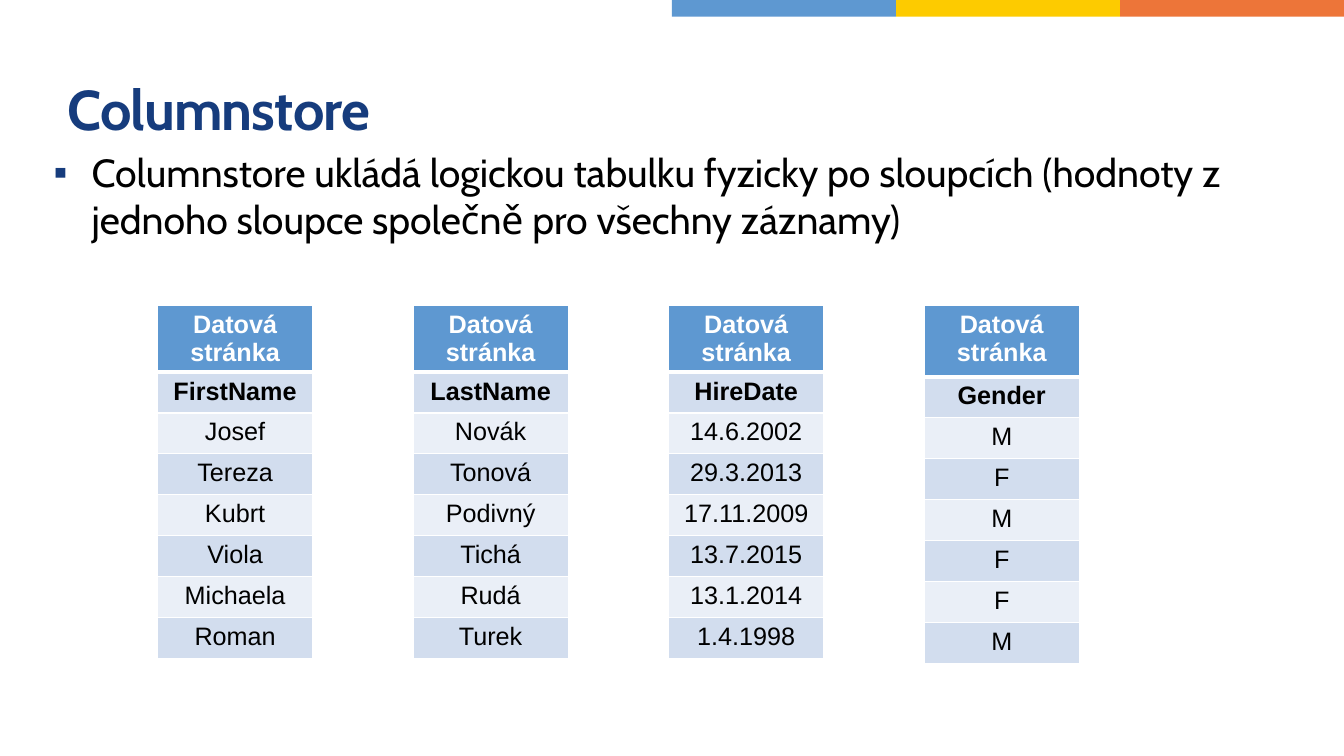
from lxml.etree import SubElement
from pptx import Presentation
from pptx.dml.color import RGBColor
from pptx.enum.shapes import MSO_SHAPE
from pptx.enum.text import MSO_ANCHOR, MSO_AUTO_SIZE, PP_ALIGN
from pptx.oxml.ns import qn
from pptx.util import Cm, Pt

NAVY = RGBColor(0x16, 0x3C, 0x7D)
BLUE = RGBColor(0x5E, 0x98, 0xD1)
YELLOW = RGBColor(0xFD, 0xCB, 0x00)
ORANGE = RGBColor(0xED, 0x75, 0x39)
PALE = RGBColor(0xD2, 0xDD, 0xEE)
PALER = RGBColor(0xEA, 0xEF, 0xF7)
WHITE = RGBColor(0xFF, 0xFF, 0xFF)
BLACK = RGBColor(0x00, 0x00, 0x00)

TITLE_FONT = {"name": "Cabin", "size": Pt(40), "bold": True}
BODY_FONT = {"name": "Cabin", "size": Pt(28)}
CELL_FONT = {"name": "Arial", "size": Pt(18)}
FLUSH = {
    "margin_left": 0, "margin_top": 0, "margin_right": 0, "margin_bottom": 0,
    "word_wrap": True, "auto_size": MSO_AUTO_SIZE.NONE,
}

DATA_PAGES = [
    (Cm(1.67), ["FirstName", "Josef", "Tereza", "Kubrt", "Viola", "Michaela", "Roman"]),
    (Cm(1.67), ["LastName", "Novák", "Tonová", "Podivný", "Tichá", "Rudá", "Turek"]),
    (Cm(1.67), ["HireDate", "14.6.2002", "29.3.2013", "17.11.2009",
                "13.7.2015", "13.1.2014", "1.4.1998"]),
    (Cm(1.8), ["Gender", "M", "F", "M", "F", "F", "M"]),
]


def apply(target, values):
    for attribute, value in values.items():
        setattr(target, attribute, value)


def style_font(font, values, color):
    apply(font, values)
    font.color.rgb = color


def add_stripes(slide, left, top, width, height):
    colors = [BLUE, YELLOW, ORANGE]
    step = width // len(colors)
    for index, color in enumerate(colors):
        stripe = slide.shapes.add_shape(
            MSO_SHAPE.RECTANGLE, left + index * step, top, step, height)
        stripe.shadow.inherit = False
        stripe.fill.solid()
        stripe.fill.fore_color.rgb = color
        stripe.line.fill.background()


def set_title(slide, left, top, width, height):
    heading = slide.shapes.title
    apply(heading, {"left": left, "top": top, "width": width, "height": height})
    apply(heading.text_frame, FLUSH)
    heading.text_frame.vertical_anchor = MSO_ANCHOR.MIDDLE
    paragraph = heading.text_frame.paragraphs[0]
    paragraph.alignment = PP_ALIGN.LEFT
    run = paragraph.add_run()
    run.text = "Columnstore"
    style_font(run.font, TITLE_FONT, NAVY)
    run.font._element.set("spc", "-60")


def add_explanation(slide, left, top, width, height):
    frame = slide.shapes.add_textbox(left, top, width, height).text_frame
    apply(frame, FLUSH)
    paragraph = frame.paragraphs[0]
    paragraph.space_before = Pt(5.6)
    properties = paragraph._p.get_or_add_pPr()
    properties.set("marL", str(Cm(0.96)))
    properties.set("indent", str(-Cm(0.96)))
    bullet_color = SubElement(properties, qn("a:buClr"))
    SubElement(bullet_color, qn("a:srgbClr"), val=str(NAVY))
    SubElement(properties, qn("a:buFont"), typeface="Arial")
    SubElement(properties, qn("a:buChar"), char="▪")
    run = paragraph.add_run()
    run.text = ("Columnstore ukládá logickou tabulku fyzicky po sloupcích "
                "(hodnoty z jednoho sloupce společně pro všechny záznamy)")
    style_font(run.font, BODY_FONT, BLACK)


def set_borders(cell, bottom, top):
    properties = cell._tc.get_or_add_tcPr()
    widths = {"a:lnL": 1, "a:lnR": 1, "a:lnT": top, "a:lnB": bottom}
    for position, (side, points) in enumerate(widths.items()):
        border = properties.makeelement(qn(side), {"w": str(Pt(points))})
        fill = SubElement(border, qn("a:solidFill"))
        SubElement(fill, qn("a:srgbClr"), val=str(WHITE))
        properties.insert(position, border)


def add_data_page(slide, left, top, width, header_height, row_height, values):
    entries = ["Datová stránka", *values]
    height = header_height + row_height * len(values)
    page = slide.shapes.add_table(len(entries), 1, left, top, width, height).table
    for index, entry in enumerate(entries):
        page.rows[index].height = row_height if index else header_height
        cell = page.cell(index, 0)
        cell.fill.solid()
        cell.fill.fore_color.rgb = (PALE if index % 2 else PALER) if index else BLUE
        set_borders(cell, bottom=1 if index else 3, top=3 if index == 1 else 1)
        paragraph = cell.text_frame.paragraphs[0]
        paragraph.alignment = PP_ALIGN.CENTER
        run = paragraph.add_run()
        run.text = entry
        style_font(run.font, {**CELL_FONT, "bold": index < 2}, BLACK if index else WHITE)


def add_data_pages(slide, left, top, width, page_width):
    step = (width - page_width) // (len(DATA_PAGES) - 1)
    for index, (header_height, values) in enumerate(DATA_PAGES):
        add_data_page(slide, left + index * step, top, page_width,
                      header_height, Cm(1.03), values)


def main():
    deck = Presentation()
    apply(deck, {"slide_width": Cm(33.87), "slide_height": Cm(19.05)})
    slide = deck.slides.add_slide(deck.slide_layouts[5])
    half = deck.slide_width // 2
    add_stripes(slide, half, 0, half, Cm(0.42))
    set_title(slide, Cm(1.7), Cm(1.14), Cm(30.48), Cm(3.18))
    add_explanation(slide, Cm(1.35), Cm(3.73), Cm(31.29), Cm(3.02))
    add_data_pages(slide, Cm(3.97), Cm(7.7), Cm(23.23), Cm(3.91))
    deck.save("out.pptx")


if __name__ == "__main__":
    main()
